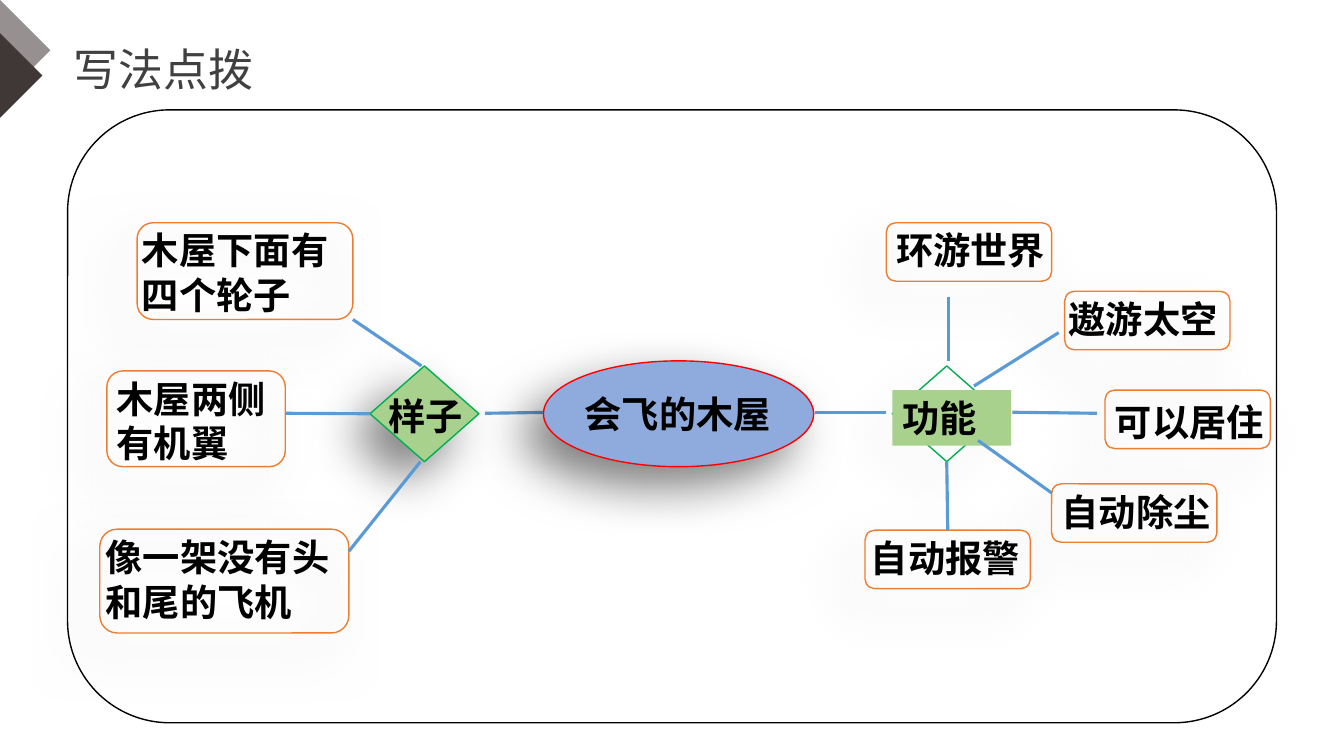
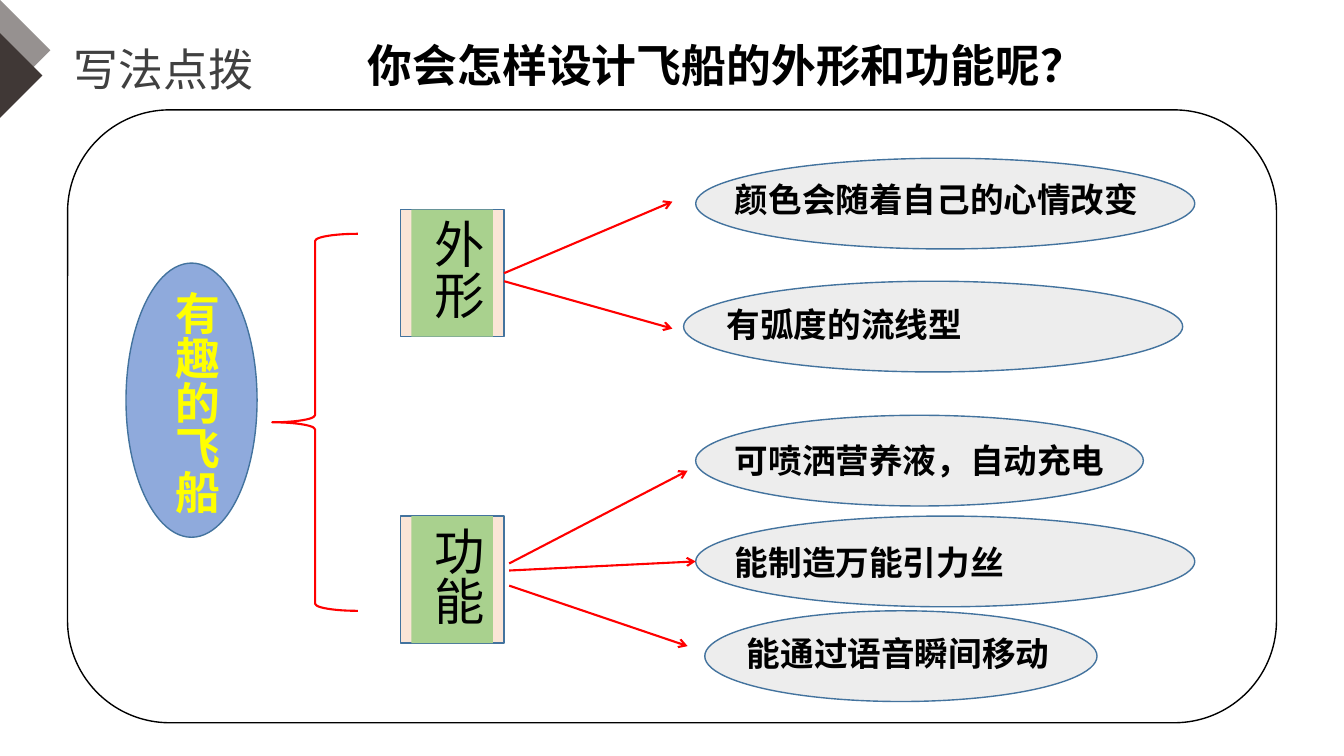
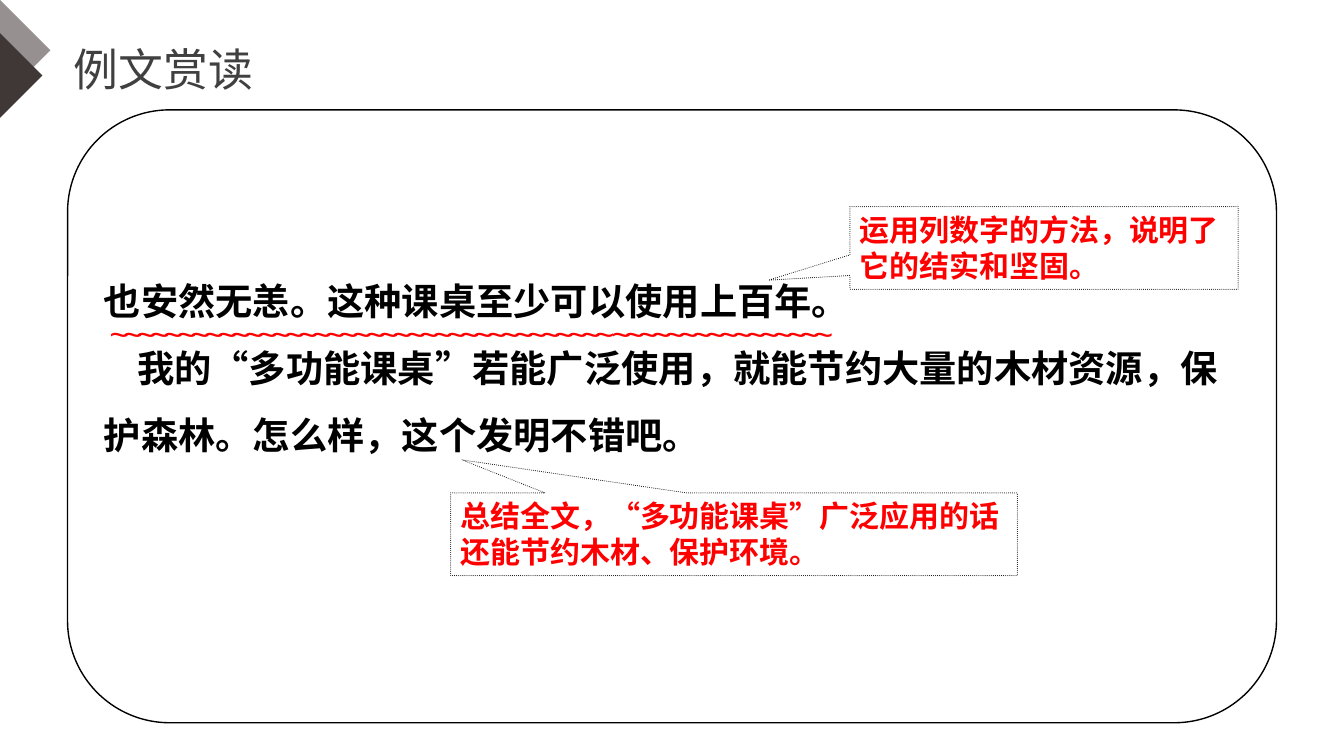
from dataclasses import dataclass

from pptx import Presentation
from pptx.dml.color import RGBColor
from pptx.enum.dml import MSO_LINE_DASH_STYLE as Dash
from pptx.enum.shapes import MSO_CONNECTOR as Connector
from pptx.enum.shapes import MSO_SHAPE as Preset
from pptx.enum.text import MSO_ANCHOR as Anchor
from pptx.enum.text import MSO_AUTO_SIZE as AutoSize
from pptx.enum.text import PP_ALIGN as Align
from pptx.oxml.ns import qn
from pptx.oxml.xmlchemy import OxmlElement
from pptx.util import Emu, Pt

PX = 9144


@dataclass(frozen=True)
class Theme:
    font: str = "Arial"
    ink: str = "000000"
    title: str = "404040"
    corner: str = "403836"
    red: str = "FF0000"
    yellow: str = "FFFF00"
    green: str = "A9D18E"
    green_edge: str = "00B050"
    blue: str = "8FAADC"
    blue_edge: str = "43739E"
    link: str = "5B9BD5"
    orange: str = "ED7D31"
    peach: str = "FBE5D6"
    gray: str = "EDEDED"
    heading_size: float = 32
    node_size: float = 26.6
    branch_size: float = 36
    idea_size: float = 24
    note_size: float = 21.4


THEME = Theme()


def px(*lengths):
    return [Emu(length * PX) for length in lengths]


def rgb(color):
    return RGBColor.from_string(color)


def child(parent, tag, **attributes):
    element = OxmlElement(tag)
    for name, value in attributes.items():
        element.set(name, str(value))
    parent.append(element)
    return element


def write(frame, text, size, color=THEME.ink, bold=False, spacing=None):
    frame.text = text
    frame.word_wrap = True
    frame.auto_size = AutoSize.NONE
    frame.vertical_anchor = Anchor.TOP
    for para in frame.paragraphs:
        para.alignment = Align.LEFT
        for span in para.runs:
            span.font.name = THEME.font
            span.font.size = Pt(size)
            span.font.bold = bold
            span.font.color.rgb = rgb(color)
            properties = span._r.get_or_add_rPr()
            properties.set("lang", "zh-CN")
            if spacing is not None:
                properties.set("spc", str(spacing))


def label(page, text, at, size, color=THEME.ink, bold=True, fill=None, vertical=False):
    box = page.shapes.add_textbox(*px(*at))
    if fill:
        box.fill.solid()
        box.fill.fore_color.rgb = rgb(fill)
    write(box.text_frame, text, size, color, bold)
    if vertical:
        box.text_frame._txBody.bodyPr.set("vert", "eaVert")
    return box


def paint(shape, fill=None, edge=None, width=1):
    shape.shadow.inherit = False
    if fill:
        shape.fill.solid()
        shape.fill.fore_color.rgb = rgb(fill)
    else:
        shape.fill.background()
    if edge:
        shape.line.color.rgb = rgb(edge)
        shape.line.width = Pt(width)
    else:
        shape.line.fill.background()
    return shape


def figure(page, preset, at, fill=None, edge=THEME.ink, width=1):
    return paint(page.shapes.add_shape(preset, *px(*at)), fill, edge, width)


def cast_shadow(shape):
    effects = shape.element.spPr.find(qn("a:effectLst"))
    shadow = child(effects, "a:outerShdw", blurRad=Pt(35), dist=Pt(20),
                   dir=135 * 60000, algn="ctr", rotWithShape=0)
    color = child(shadow, "a:srgbClr", val=THEME.ink)
    child(color, "a:alpha", val=50000)
    return shape


def connect(page, start, end, color, width, arrow=False, begin_at=None, end_at=None):
    line = page.shapes.add_connector(Connector.STRAIGHT, *px(*start, *end))
    line.line.color.rgb = rgb(color)
    line.line.width = Pt(width)
    if begin_at:
        line.begin_connect(*begin_at)
    if end_at:
        line.end_connect(*end_at)
    if arrow:
        child(line.line._get_or_add_ln(), "a:tailEnd", type="arrow")
    child(line.element.spPr, "a:effectLst")


def corner(page, top, reach, alpha=None):
    builder = page.shapes.build_freeform(0, top, scale=PX)
    builder.add_line_segments([(reach, top + reach), (0, top + 2 * reach)])
    shape = paint(builder.convert_to_shape(), THEME.corner)
    if alpha:
        color = shape.element.spPr.find(qn("a:solidFill"))[0]
        child(color, "a:alpha", val=alpha * 1000)
    return shape


def decorate_master(deck, page):
    master = deck.slide_master
    parts = [
        corner(page, 0, 50, alpha=55),
        corner(page, 33, 42),
        figure(page, Preset.ROUNDED_RECTANGLE, (67, 109, 1199, 608)),
    ]
    for part in parts:
        master.shapes.element.append(part.element)
    heading = next(item for item in master.placeholders if "Title" in item.name)
    heading.left, heading.top, heading.width, heading.height = px(63, 36, 451, 64)


def set_title(page, text):
    write(page.shapes.title.text_frame, text, THEME.heading_size, THEME.title)


def node(page, at, text, shift=(0, 0), room=189):
    left, top, width, height = at
    shape = cast_shadow(figure(page, Preset.ROUNDED_RECTANGLE, at, edge=THEME.orange))
    label(page, text, (left + shift[0], top + shift[1], room, height), THEME.node_size)
    return shape


def draw_house_map(page):
    set_title(page, "写法点拨")
    look, use = [
        cast_shadow(figure(page, Preset.DIAMOND, (left, 363, 108, 95), fill, THEME.green_edge))
        for left, fill in ((367, THEME.green), (885, None))
    ]
    label(page, "样子", (375, 385, 118, 55), THEME.node_size)
    label(page, "功能", (885, 387, 118, 55), THEME.node_size, fill=THEME.green)

    node(page, (136, 221, 214, 96), "木屋下面有四个轮子", (-5, 0), 215)
    node(page, (106, 368, 177, 95), "木屋两侧有机翼", room=190)
    node(page, (99, 525, 247, 103), "像一架没有头和尾的飞机", (-4, 0), 251)
    functions = [
        (879, 221, "环游世界", (0, 0)),
        (1056, 289, "遨游太空", (-6, 0)),
        (1096, 387, "可以居住", (0, 4)),
        (1043, 480, "自动除尘", (0, 0)),
        (858, 526, "自动报警", (-4, 0)),
    ]
    for left, top, text, shift in functions:
        alarm = node(page, (left, top, 164, 58), text, shift)

    links = [
        ((481, 410), (552, 409), None, None),
        ((350, 317), (418, 363), None, None),
        ((283, 410), (367, 411), None, (look, 1)),
        ((346, 547), (417, 458), None, None),
        ((808, 409), (879, 409), None, None),
        ((941, 295), (941, 358), None, None),
        ((1050, 330), (966, 383), None, None),
        ((1088, 410), (1004, 409), None, None),
        ((1043, 489), (970, 437), None, None),
        ((939, 458), (941, 526), (use, 2), (alarm, 0)),
    ]
    for start, end, begin_at, end_at in links:
        connect(page, start, end, THEME.link, 2.25, begin_at=begin_at, end_at=end_at)

    cast_shadow(figure(page, Preset.OVAL, (539, 358, 268, 105), THEME.blue, THEME.red))
    label(page, "会飞的木屋", (570, 383, 238, 55), THEME.node_size)


def draw_ship_plan(page):
    set_title(page, "写法点拨")
    label(page, "你会怎样设计飞船的外形和功能呢？", (355, 33, 895, 64), THEME.heading_size)
    figure(page, Preset.OVAL, (125, 261, 130, 272), THEME.blue, THEME.blue_edge)
    label(page, "有趣的飞船", (152, 279, 74, 252), THEME.heading_size, THEME.yellow, vertical=True)
    figure(page, Preset.LEFT_BRACE, (270, 232, 85, 374), edge=THEME.red, width=1.5)

    branches = []
    for top, text in ((208, "外形"), (512, "功能")):
        branches.append(figure(page, Preset.RECTANGLE, (397, top, 103, 126),
                               THEME.peach, THEME.blue_edge))
        label(page, text, (408, top, 81, 126), THEME.branch_size,
              bold=False, fill=THEME.green, vertical=True)

    ideas = [
        ((690, 157, 495), (719, 173), "颜色会随着自己的心情改变"),
        ((678, 279, 495), (711, 297), "有弧度的流线型"),
        ((690, 412, 444), (719, 432), "可喷洒营养液，自动充电"),
        ((690, 512, 495), (719, 533), "能制造万能引力丝"),
        ((699, 606, 389), (731, 623), "能通过语音瞬间移动"),
    ]
    for oval, corner_at, text in ideas:
        figure(page, Preset.OVAL, (*oval, 90), THEME.gray, THEME.blue_edge)
        label(page, text, (*corner_at, 454, 50), THEME.idea_size)

    arrows = [
        ((500, 271), (667, 200), (branches[0], 3)),
        ((500, 279), (667, 326), None),
        ((505, 559), (682, 467), None),
        ((505, 566), (690, 557), None),
        ((505, 581), (682, 641), None),
    ]
    for start, end, begin_at in arrows:
        connect(page, start, end, THEME.red, 1.5, arrow=True, begin_at=begin_at)


def callout(page, at, tip, text):
    shape = figure(page, Preset.RECTANGULAR_CALLOUT, at, width=0.75)
    shape.line.dash_style = Dash.ROUND_DOT
    shape.line._get_or_add_ln().set("cap", "rnd")
    shape.adjustments[0], shape.adjustments[1] = tip
    write(shape.text_frame, text, THEME.note_size, THEME.red, bold=True)


def draw_sample_text(page):
    set_title(page, "例文赏读")
    body = page.placeholders[1]
    body.left, body.top, body.width, body.height = px(93, 249, 1155, 272)
    write(body.text_frame,
          "也安然无恙。这种课桌至少可以使用上百年。\n"
          "我的“多功能课桌”若能广泛使用，就能节约大量的木材资源，保护森林。怎么样，这个发明不错吧。",
          THEME.node_size, bold=True)
    for para, indent in zip(body.text_frame.paragraphs, (0, 33)):
        para.line_spacing = 1.5
        para.space_before = Pt(0)
        properties = para._p.get_or_add_pPr()
        properties.set("marL", "0")
        properties.set("indent", str(indent * PX))
        child(properties, "a:buNone")

    callout(page, (843, 205, 385, 82), (-0.71, 0.39),
            "运用列数字的方法，说明了它的结实和坚固。")
    callout(page, (447, 489, 562, 82), (-0.48, -0.9),
            "总结全文，“多功能课桌”广泛应用的话还能节约木材、保护环境。")
    wave = page.shapes.add_textbox(*px(99, 305, 1150, 91))
    write(wave.text_frame, "~" * 37 + " " + "~" * 16, THEME.idea_size, THEME.red, spacing=-440)


def main():
    deck = Presentation()
    deck.slide_width, deck.slide_height = px(1333, 750)
    text_layout, title_layout = deck.slide_layouts[1], deck.slide_layouts[5]
    house = deck.slides.add_slide(title_layout)
    decorate_master(deck, house)
    draw_house_map(house)
    draw_ship_plan(deck.slides.add_slide(title_layout))
    draw_sample_text(deck.slides.add_slide(text_layout))
    deck.save("out.pptx")


if __name__ == "__main__":
    main()
